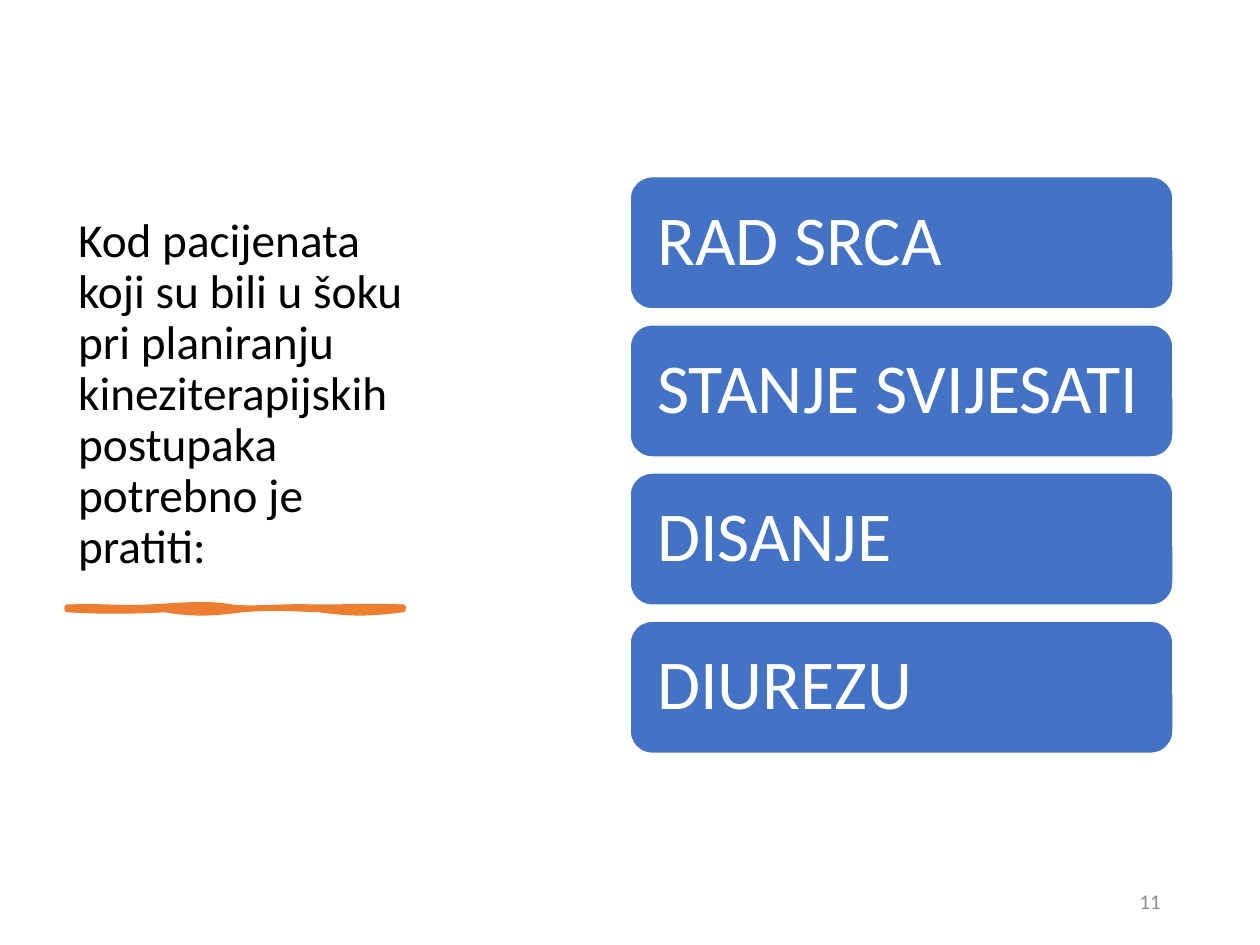
import pptx
import pptx.dml.color
import pptx.enum.shapes
import pptx.enum.text
import pptx.util

Cm = pptx.util.Cm
Pt = pptx.util.Pt
ANCHOR = pptx.enum.text.MSO_ANCHOR
ALIGN = pptx.enum.text.PP_ALIGN

INDICATORS = ["RAD SRCA", "STANJE SVIJESATI", "DISANJE", "DIUREZU"]
TOP_EDGE = [
    [(0, 0), (0.76, -0.03), (0.99, 0.03), (1.63, 0)],
    [(1.63, 0), (2.31, -0.03), (2.77, -0.1), (3.33, 0)],
    [(3.33, 0), (3.76, 0.05), (4.37, -0.03), (5, 0)],
    [(5, 0), (5.59, 0), (6.22, -0.03), (6.78, 0)],
]
BOTTOM_EDGE = [
    [(6.78, 0.05), (5.99, 0.15), (5.69, 0.13), (5.08, 0.05)],
    [(5.08, 0.05), (4.47, 0.03), (4.22, 0), (3.53, 0.05)],
    [(3.53, 0.05), (2.82, 0.15), (2.46, 0.13), (1.96, 0.05)],
    [(1.96, 0.05), (1.45, 0.08), (0.84, 0.1), (0, 0.05)],
]


def rgb(value):
    return pptx.dml.color.RGBColor.from_string(value)


def paint(shape, fill, line, width):
    shape.shadow.inherit = False
    shape.fill.solid()
    shape.fill.fore_color.rgb = rgb(fill)
    shape.line.color.rgb = rgb(line)
    shape.line.width = Pt(width)


def write(shape, text, size, color, anchor, align=ALIGN.LEFT, spacing=0.9):
    frame = shape.text_frame
    frame.word_wrap = True
    frame.auto_size = pptx.enum.text.MSO_AUTO_SIZE.NONE
    frame.vertical_anchor = anchor
    paragraph = frame.paragraphs[0]
    paragraph.alignment = align
    paragraph.line_spacing = spacing
    run = paragraph.add_run()
    run.text = text
    run.font.name = "Calibri"
    run.font.size = Pt(size)
    run.font.color.rgb = rgb(color)
    return frame


def curve_points(curve, steps=10):
    for step in range(steps + 1):
        t = step / steps
        weights = [(1 - t) ** 3, 3 * t * (1 - t) ** 2, 3 * t**2 * (1 - t), t**3]
        yield tuple(sum(w * point[axis] for w, point in zip(weights, curve)) for axis in (0, 1))


def place_title(slide, left, top, width, height):
    title = slide.shapes.title
    title.left, title.top, title.width, title.height = Cm(left), Cm(top), Cm(width), Cm(height)
    write(
        title,
        "Kod pacijenata koji su bili u šoku pri planiranju "
        "kineziterapijskih postupaka potrebno je pratiti:",
        27, "000000", ANCHOR.BOTTOM,
    )


def draw_underline(slide, left, top):
    outline = [
        (Cm(left + x), Cm(top + y))
        for curve in TOP_EDGE + BOTTOM_EDGE
        for x, y in curve_points(curve)
    ]
    builder = slide.shapes.build_freeform(*outline[0])
    builder.add_line_segments(outline[1:], close=True)
    paint(builder.convert_to_shape(), "ED7D31", "ED7D31", 3)


def place_indicators(slide, left, top, width, height, card_height=2.67):
    pitch = (height - card_height) / (len(INDICATORS) - 1)
    for row, indicator in enumerate(INDICATORS):
        card = slide.shapes.add_shape(
            pptx.enum.shapes.MSO_SHAPE.ROUNDED_RECTANGLE,
            Cm(left), Cm(top + row * pitch), Cm(width), Cm(card_height),
        )
        paint(card, "4472C4", "FFFFFF", 1)
        frame = write(card, indicator, 40, "FFFFFF", ANCHOR.MIDDLE)
        frame.margin_left = Cm(0.42)
        frame.margin_right = Cm(0.2)


def place_page_number(slide, left, top, width, height):
    page_number = slide.shapes.add_textbox(Cm(left), Cm(top), Cm(width), Cm(height))
    write(page_number, "11", 12, "8C8C8C", ANCHOR.MIDDLE, ALIGN.RIGHT, 1.0)


def main():
    presentation = pptx.Presentation()
    presentation.slide_width = Cm(25.4)
    presentation.slide_height = Cm(19.05)
    slide = presentation.slides.add_slide(presentation.slide_layouts[5])
    place_title(slide, 1.32, 1.78, 7.44, 9.92)
    draw_underline(slide, 1.35, 12.24)
    place_page_number(slide, 17.93, 17.65, 5.72, 1.02)
    place_indicators(slide, 12.7, 3.56, 10.95, 11.63)
    presentation.save("out.pptx")


if __name__ == "__main__":
    main()
